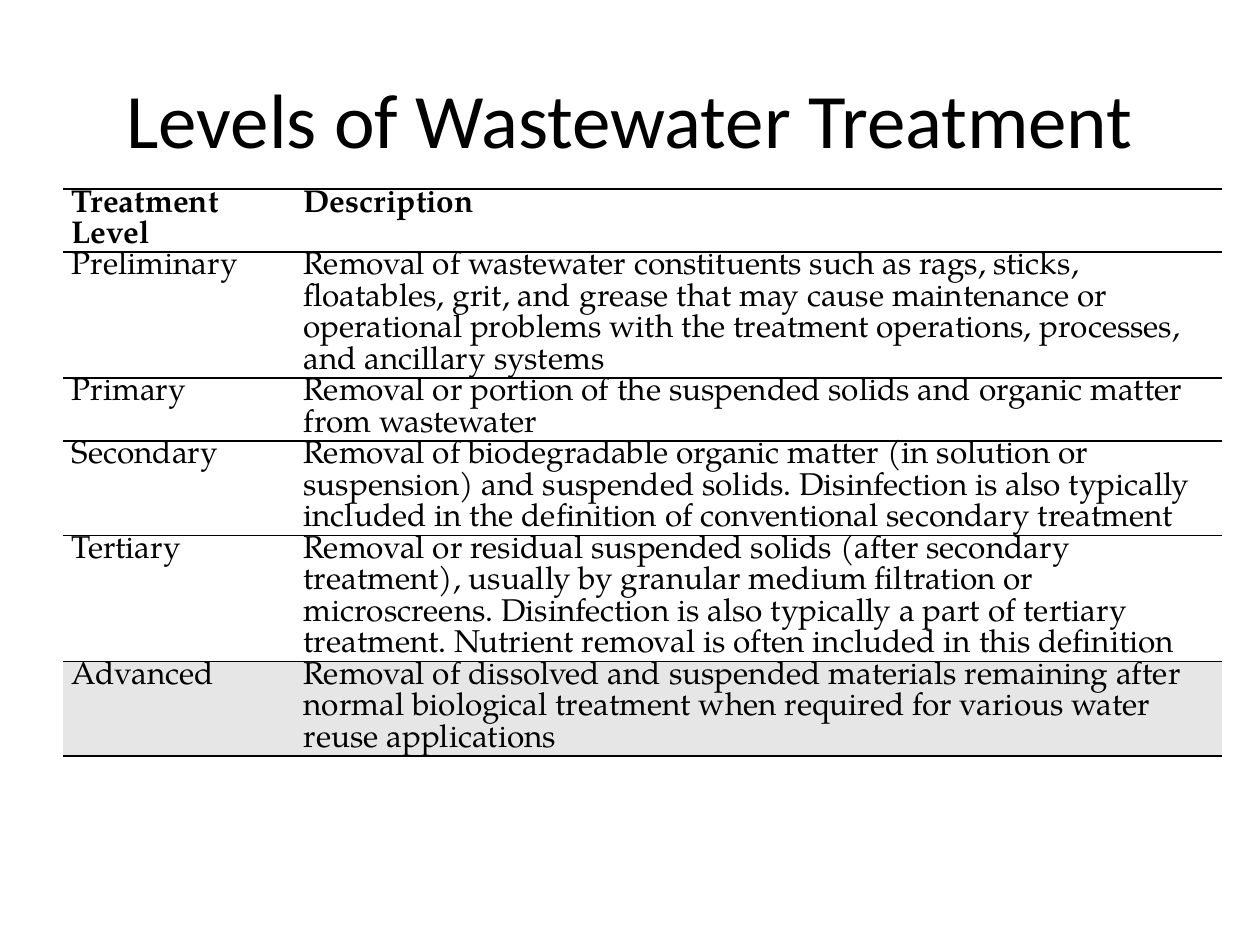
import pptx
import pptx.dml.color
import pptx.enum.text
import pptx.oxml
import pptx.oxml.ns
import pptx.util
from pptx.util import Inches, Pt

RGBColor = pptx.dml.color.RGBColor
MSO_ANCHOR = pptx.enum.text.MSO_ANCHOR
PP_ALIGN = pptx.enum.text.PP_ALIGN

BLACK = RGBColor(0x00, 0x00, 0x00)
WHITE = RGBColor(0xFF, 0xFF, 0xFF)
GREY = RGBColor(0xE6, 0xE6, 0xE6)
TITLE_FONT = "Calibri"
TABLE_FONT = "TeX Gyre Pagella"

SLIDE_WIDTH, SLIDE_HEIGHT = Inches(10), Inches(7.5)
TITLE_BOX = (0.05, 0.04, 0.9, 0.17)  # shares of the slide: left, top, width, height
TABLE_BOX = (0.05, 0.2, 0.92, 0.43)
COLUMN_SHARES = (0.2, 0.8)
THICK, THIN = 1.5, 1

LEVELS = [  # level, description, least row height in inches
    ("Treatment Level", "Description", 0.25),
    ("Preliminary", "Removal of wastewater constituents such as rags, sticks, floatables, "
     "grit, and grease that may cause maintenance or operational problems with the "
     "treatment operations, processes, and ancillary systems", 0.74),
    ("Primary", "Removal or portion of the suspended solids and organic matter "
     "from wastewater", 0.25),
    ("Secondary", "Removal of biodegradable organic matter (in solution or suspension) "
     "and suspended solids. Disinfection is also typically included in the definition "
     "of conventional secondary treatment", 0.74),
    ("Tertiary", "Removal or residual suspended solids (after secondary treatment), "
     "usually by granular medium filtration or microscreens. Disinfection is also "
     "typically a part of tertiary treatment. Nutrient removal is often included in "
     "this definition", 0.74),
    ("Advanced", "Removal of dissolved and suspended materials remaining after normal "
     "biological treatment when required for various water reuse applications", 0.5),
]


def place(box):
    """Turn shares of the slide into lengths."""
    left, top, width, height = box
    return (int(left * SLIDE_WIDTH), int(top * SLIDE_HEIGHT),
            int(width * SLIDE_WIDTH), int(height * SLIDE_HEIGHT))


def write(frame, text, *, font, size, bold=False, color=BLACK,
          align=PP_ALIGN.LEFT, line_spacing=None):
    paragraph = frame.paragraphs[0]
    paragraph.alignment = align
    paragraph.line_spacing = line_spacing
    run = paragraph.add_run()
    run.text = text
    run.font.name = font
    run.font.size = Pt(size)
    run.font.bold = bold
    run.font.color.rgb = color


def rule_cell(cell, top, bottom):
    """Draw lines above and below a cell, and none at its sides."""
    properties = cell._tc.get_or_add_tcPr()
    namespace = pptx.oxml.ns.nsdecls("a")
    for index, (side, weight) in enumerate(
            (("L", None), ("R", None), ("T", top), ("B", bottom))):
        if weight is None:
            xml = f"<a:ln{side} {namespace}><a:noFill/></a:ln{side}>"
        else:
            xml = (f'<a:ln{side} {namespace} w="{int(Pt(weight))}"><a:solidFill>'
                   f'<a:srgbClr val="{BLACK}"/></a:solidFill></a:ln{side}>')
        properties.insert(index, pptx.oxml.parse_xml(xml))


def add_title(slide, box):
    frame = slide.shapes.add_textbox(*place(box)).text_frame
    frame.word_wrap = True
    frame.vertical_anchor = MSO_ANCHOR.MIDDLE
    write(frame, "Levels of Wastewater Treatment", font=TITLE_FONT, size=44,
          align=PP_ALIGN.CENTER)


def add_levels_table(slide, box):
    left, top, width, height = place(box)
    table = slide.shapes.add_table(len(LEVELS), len(COLUMN_SHARES),
                                   left, top, width, height).table
    table.horz_banding = False
    table.first_row = False
    for column, share in zip(table.columns, COLUMN_SHARES):
        column.width = int(width * share)

    last = len(LEVELS) - 1
    rules = [THICK, THICK] + [THIN] * (last - 1) + [THICK]
    for r, (level, description, row_height) in enumerate(LEVELS):
        table.rows[r].height = Inches(row_height)
        for c, text in enumerate((level, description)):
            cell = table.cell(r, c)
            cell.margin_left = cell.margin_right = Inches(0.07)
            cell.margin_top = cell.margin_bottom = 0
            centred = r > 0 and c == 1
            cell.vertical_anchor = MSO_ANCHOR.MIDDLE if centred else MSO_ANCHOR.TOP
            cell.fill.solid()
            cell.fill.fore_color.rgb = GREY if r == last else WHITE
            rule_cell(cell, rules[r], rules[r + 1])
            write(cell.text_frame, text, font=TABLE_FONT, size=18, bold=r == 0,
                  line_spacing=Pt(18))


def main():
    deck = pptx.Presentation()
    deck.slide_width, deck.slide_height = SLIDE_WIDTH, SLIDE_HEIGHT
    slide = deck.slides.add_slide(deck.slide_layouts[6])
    add_title(slide, TITLE_BOX)
    add_levels_table(slide, TABLE_BOX)
    deck.save("out.pptx")


if __name__ == "__main__":
    main()
